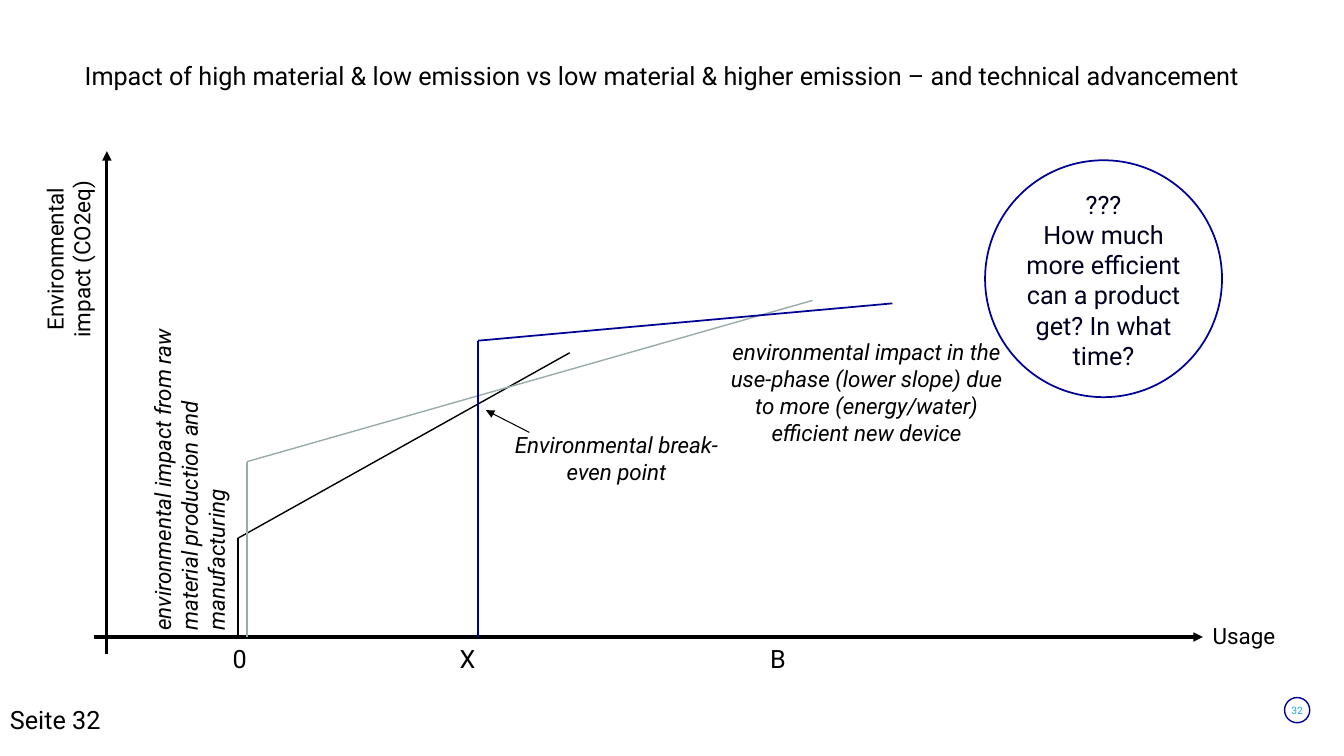
import pptx
import pptx.util
import pptx.dml.color
import pptx.enum.shapes
import pptx.enum.text
import pptx.oxml
import pptx.oxml.ns

RGBColor = pptx.dml.color.RGBColor
MSO_SHAPE = pptx.enum.shapes.MSO_SHAPE
ANCHOR = pptx.enum.text.MSO_ANCHOR
ALIGN = pptx.enum.text.PP_ALIGN

BLACK = RGBColor(0x00, 0x00, 0x00)
NAVY = RGBColor(0x00, 0x00, 0x95)
DARK_NAVY = RGBColor(0x00, 0x00, 0x1E)
GREY = RGBColor(0x9B, 0xAA, 0xAA)
SKY = RGBColor(0x24, 0xA8, 0xE0)
FONT = "Roboto"

presentation = pptx.Presentation()
presentation.slide_width = pptx.util.Inches(13.33)
presentation.slide_height = pptx.util.Inches(7.5)
slide = presentation.slides.add_slide(presentation.slide_layouts[6])

# Square grid: 133.3 columns by 75 rows
CELL = presentation.slide_height / 75
BASELINE, ORIGIN, BREAK_EVEN = 63.2, 23.6, 47.4


def add_text(text, box, size=16, color=BLACK, italic=False, align=ALIGN.LEFT, anchor=ANCHOR.TOP,
             margins=(1, 0.5), rotation=0, spacing=1.0, outline=None):
    """Add text in a box of grid cells, or in an ellipse when outline is a (color, width) pair."""
    place = [round(value * CELL) for value in box]
    if outline:
        shape = slide.shapes.add_shape(MSO_SHAPE.OVAL, *place)
        shape.shadow.inherit = False
        shape.fill.background()
        shape.line.color.rgb = outline[0]
        shape.line.width = pptx.util.Pt(outline[1])
    else:
        shape = slide.shapes.add_textbox(*place)
    shape.rotation = rotation
    frame = shape.text_frame
    frame.word_wrap = True
    frame.vertical_anchor = anchor
    frame.margin_left = frame.margin_right = round(margins[0] * CELL)
    frame.margin_top = frame.margin_bottom = round(margins[1] * CELL)
    paragraph = frame.paragraphs[0]
    paragraph.text = text
    paragraph.alignment = align
    paragraph.line_spacing = spacing
    for run in paragraph.runs:
        run.font.name = FONT
        run.font.size = pptx.util.Pt(size)
        run.font.italic = italic
        run.font.color.rgb = color


def add_line(start, end, color=BLACK, width=1, arrow=False):
    connector = slide.shapes.add_connector(
        pptx.enum.shapes.MSO_CONNECTOR.STRAIGHT, *[round(value * CELL) for value in start + end])
    connector.line.color.rgb = color
    connector.line.width = pptx.util.Pt(width)
    if arrow:
        head = pptx.oxml.parse_xml(f'<a:tailEnd {pptx.oxml.ns.nsdecls("a")} type="triangle"/>')
        connector.line._get_or_add_ln().append(head)
    effects = pptx.oxml.parse_xml(f'<a:effectLst {pptx.oxml.ns.nsdecls("a")}/>')
    connector._element.spPr.append(effects)


# Title and page numbers
add_text("Impact of high material & low emission vs low material & higher emission"
         " – and technical advancement", (8.4, 6.5, 116.6, 2.4), size=18,
         anchor=ANCHOR.MIDDLE, margins=(0, 0), spacing=0.9)
add_text("Seite 32", (0, 69.4, 19.7, 1.3), size=18)
add_text("", (127.4, 69.2, 2.5, 2.5), outline=(NAVY, 1))
add_text("32", (127.8, 70, 1.7, 1.3), size=7.3, color=SKY, align=ALIGN.CENTER,
         margins=(0, 0), spacing=0.9)

# Axes
add_line((10.6, 64.9), (10.6, 15), width=2.25, arrow=True)
add_line((9.3, BASELINE), (119.3, BASELINE), width=2.25, arrow=True)
add_text("Usage", (119.3, 61.2, 8.4, 3.7))
add_text("Environmental impact (CO2eq)", (-2.5, 22.5, 18.6, 6.4), align=ALIGN.CENTER, rotation=270)
for label, left in (("0", 22.1), ("X", 44.6), ("B", 75.4)):
    add_text(label, (left, 63.3, 2.8, 4), size=18)

# Devices: production impact rises upright, use-phase impact slopes to the end point
for x, production, end, color, width in (
    (ORIGIN, 53.4, (56.5, 35), BLACK, 1),
    (24.5, 45.8, (80.6, 29.8), GREY, 1),
    (BREAK_EVEN, 33.8, (88.5, 30.1), NAVY, 1.25),
):
    add_line((x, BASELINE), (x, production), color, width)
    add_line((x, production), end, color, width)

# Annotations
add_text("environmental impact from raw material production and manufacturing",
         (2, 42.2, 33.6, 9.1), italic=True, rotation=270)
add_text("environmental impact in the use-phase (lower slope) due to more (energy/water)"
         " efficient new device", (71.1, 33.1, 29.7, 11.8), italic=True, align=ALIGN.CENTER)
add_text("Environmental break-even point", (50, 42.3, 22.3, 6.4), italic=True, align=ALIGN.CENTER)
add_line((52.5, 42.9), (48.2, 40.7), width=0.75, arrow=True)

# Question in a circle
add_text("", (97.7, 15.9, 23.5, 23.5), outline=(NAVY, 1.25))
add_text("???\nHow much more efficient can a product get? In what time?",
         (100.4, 18.2, 18.1, 19.1), size=18, color=DARK_NAVY, align=ALIGN.CENTER,
         anchor=ANCHOR.MIDDLE)

presentation.save("out.pptx")
